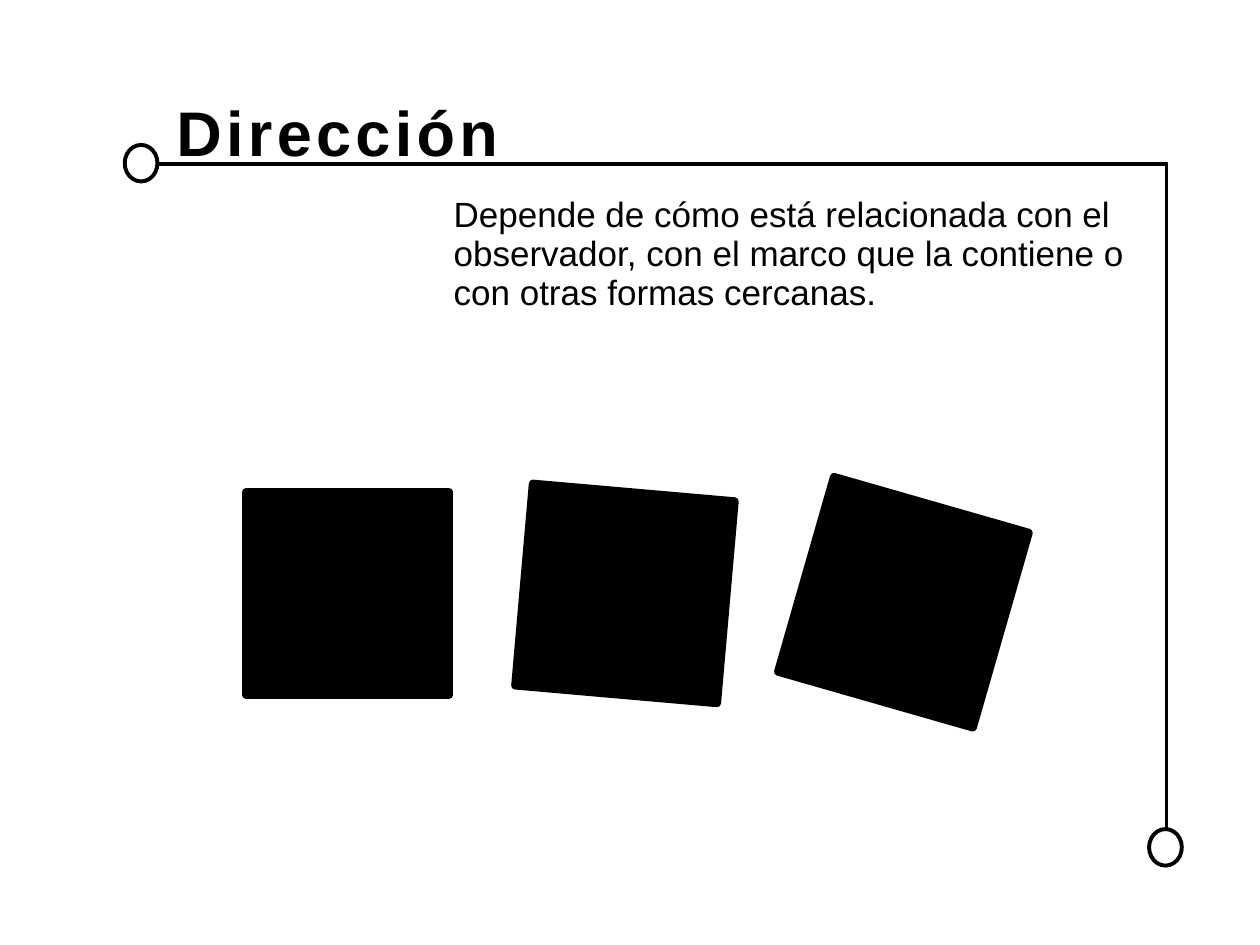
from dataclasses import dataclass

from lxml import etree
from pptx import Presentation
from pptx.dml.color import RGBColor
from pptx.enum import shapes, text
from pptx.oxml import ns
from pptx.util import Inches, Pt

BLACK = "000000"
SQUARE_SIDE = 1.61
RING_WIDTH, RING_HEIGHT = 0.26, 0.29


@dataclass
class Square:
    center_x: float
    center_y: float
    rotation: float


@dataclass
class Ring:
    left: float
    top: float


@dataclass
class TextBlock:
    content: str
    box: tuple[float, float, float, float]
    insets: dict[str, float]
    line_spacing: float
    font: dict
    letter_spacing: float = 0


def color(value: str) -> RGBColor:
    return RGBColor.from_string(value)


def style_shape(shape, fill: str | None, line_width: float) -> None:
    shape.shadow.inherit = False
    if fill:
        shape.fill.solid()
        shape.fill.fore_color.rgb = color(fill)
    else:
        shape.fill.background()
    shape.line.color.rgb = color(BLACK)
    shape.line.width = Pt(line_width)


def draw_frame(slide, points: list[tuple[float, float]]) -> None:
    start, *others = [(Inches(x), Inches(y)) for x, y in points]
    builder = slide.shapes.build_freeform(*start)
    builder.add_line_segments(others, close=True)
    style_shape(builder.convert_to_shape(), BLACK, 1)


def draw_ring(slide, ring: Ring) -> None:
    box = (ring.left, ring.top, RING_WIDTH, RING_HEIGHT)
    shape = slide.shapes.add_shape(shapes.MSO_SHAPE.OVAL, *map(Inches, box))
    style_shape(shape, None, 2.25)


def draw_square(slide, square: Square) -> None:
    half = SQUARE_SIDE / 2
    box = (square.center_x - half, square.center_y - half, SQUARE_SIDE, SQUARE_SIDE)
    shape = slide.shapes.add_shape(shapes.MSO_SHAPE.RECTANGLE, *map(Inches, box))
    shape.rotation = square.rotation
    style_shape(shape, BLACK, 4.5)
    # Rounded corners of the outline
    etree.SubElement(shape.line._get_or_add_ln(), ns.qn("a:round"))


def draw_text(slide, block: TextBlock) -> None:
    frame = slide.shapes.add_textbox(*map(Inches, block.box)).text_frame
    frame.word_wrap = True
    frame.vertical_anchor = text.MSO_ANCHOR.TOP
    for side in ("left", "top", "right", "bottom"):
        setattr(frame, f"margin_{side}", Inches(block.insets.get(side, 0)))
    paragraph = frame.paragraphs[0]
    paragraph.line_spacing = Pt(block.line_spacing)
    run = paragraph.add_run()
    run.text = block.content
    for name, value in block.font.items():
        setattr(run.font, name, value)
    run.font.color.rgb = color(BLACK)
    if block.letter_spacing:
        run._r.get_or_add_rPr().set("spc", str(int(block.letter_spacing * 100)))


# Thin corner band: outer edge, then inner edge
FRAME = [(1.25, 1.29), (9.26, 1.29), (9.26, 6.58),
         (9.25, 6.58), (9.25, 1.31), (1.25, 1.31)]
RINGS = [Ring(9.12, 6.58), Ring(0.99, 1.15)]
SQUARES = [Square(2.76, 4.71, 0), Square(4.96, 4.71, 5), Square(7.17, 4.78, 16)]
TEXTS = [
    TextBlock("Dirección", (1.39, 0.8, 2.71, 0.53), {"left": 0.01, "top": 0.03},
              36.8, {"name": "Arial", "size": Pt(36), "bold": True}, 2.5),
    TextBlock("Depende de cómo está relacionada con el observador, con el marco "
              "que la contiene o con otras formas cercanas.",
              (1.25, 1.31, 8.01, 5.28), {"left": 2.35, "top": 0.24},
              22.3, {"name": "Arial", "size": Pt(20)}),
]


def main() -> None:
    presentation = Presentation()
    presentation.slide_width = Inches(10)
    presentation.slide_height = Inches(7.5)
    slide = presentation.slides.add_slide(presentation.slide_layouts[6])

    # Frame with a ring at each end
    draw_frame(slide, FRAME)
    for ring in RINGS:
        draw_ring(slide, ring)

    # Squares turned step by step
    for square in SQUARES:
        draw_square(slide, square)

    # Title and description
    for block in TEXTS:
        draw_text(slide, block)

    presentation.save("out.pptx")


if __name__ == "__main__":
    main()
